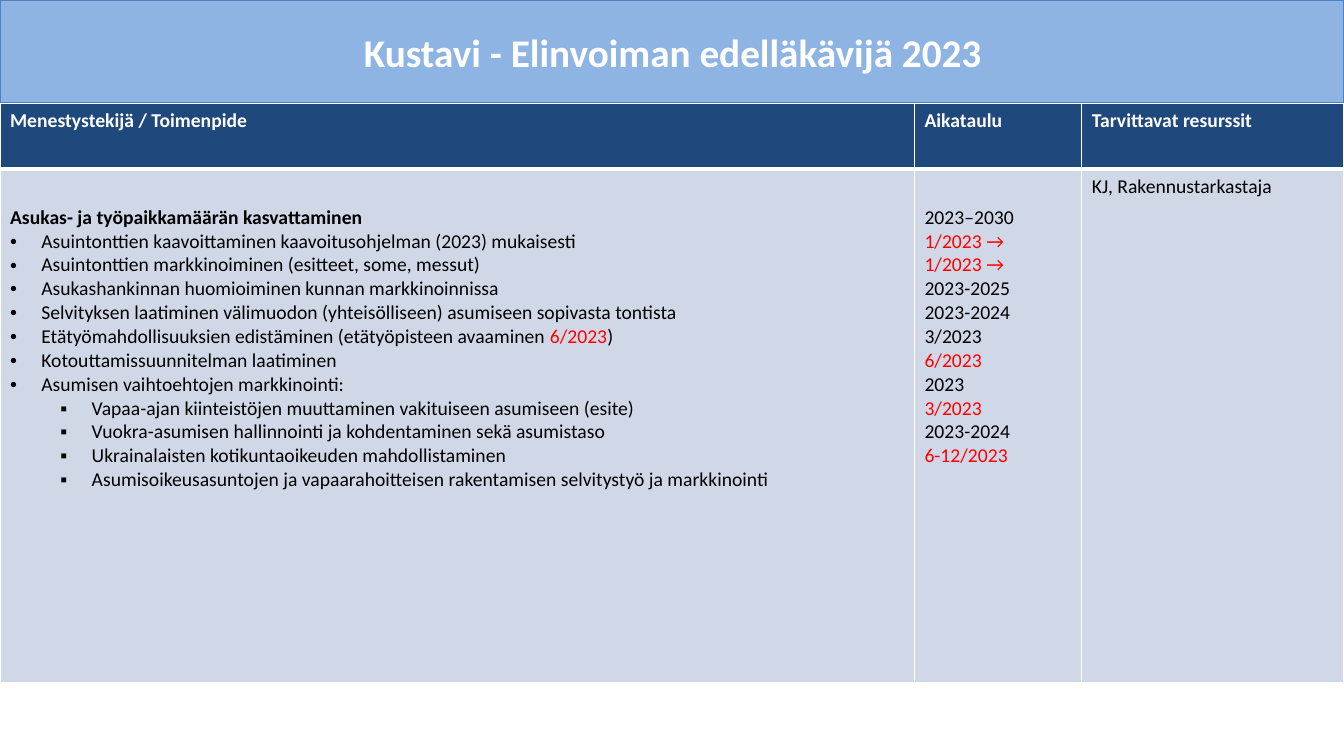
from lxml.etree import SubElement
from pptx import Presentation
from pptx.dml.color import RGBColor
from pptx.enum.shapes import MSO_SHAPE as SHAPE
from pptx.enum.text import MSO_ANCHOR as ANCHOR, PP_ALIGN as ALIGN
from pptx.oxml.ns import qn
from pptx.util import Inches, Pt

WHITE = RGBColor(0xFF, 0xFF, 0xFF)
BLACK = RGBColor(0x00, 0x00, 0x00)
RED = RGBColor(0xFF, 0x00, 0x00)
SKY = RGBColor(0x8E, 0xB4, 0xE3)
BLUE = RGBColor(0x4F, 0x81, 0xBD)
NAVY = RGBColor(0x1F, 0x49, 0x7D)
PALE = RGBColor(0xD0, 0xD8, 0xE8)

WIDTH, BANNER_H = 13.33, 1.03
COLS, ROWS = [9.07, 1.66, 2.6], [0.65, 5.09]
BULLETS = {1: ("•", 0.31), 2: ("▪", 0.81)}  # level: (mark, left indent)
HANG = 0.31

# Table text as (level, text); parts between bars are red
HEADERS = ["Menestystekijä / Toimenpide", "Aikataulu", "Tarvittavat resurssit"]
ACTIONS = [
    (0, "Asukas- ja työpaikkamäärän kasvattaminen"),
    (1, "Asuintonttien kaavoittaminen kaavoitusohjelman (2023) mukaisesti"),
    (1, "Asuintonttien markkinoiminen (esitteet, some, messut)"),
    (1, "Asukashankinnan huomioiminen kunnan markkinoinnissa"),
    (1, "Selvityksen laatiminen välimuodon (yhteisölliseen) asumiseen sopivasta tontista"),
    (1, "Etätyömahdollisuuksien edistäminen (etätyöpisteen avaaminen |6/2023|)"),
    (1, "Kotouttamissuunnitelman laatiminen"),
    (1, "Asumisen vaihtoehtojen markkinointi:"),
    (2, "Vapaa-ajan kiinteistöjen muuttaminen vakituiseen asumiseen (esite)"),
    (2, "Vuokra-asumisen hallinnointi ja kohdentaminen sekä asumistaso"),
    (2, "Ukrainalaisten kotikuntaoikeuden mahdollistaminen"),
    (2, "Asumisoikeusasuntojen ja vapaarahoitteisen rakentamisen selvitystyö ja markkinointi"),
]
SCHEDULE = ["2023–2030", "|1/2023 →|", "|1/2023 →|", "2023-2025", "2023-2024", "3/2023",
            "|6/2023|", "2023", "|3/2023|", "2023-2024", "|6-12/2023|"]
BODY = [ACTIONS, [(0, t) for t in SCHEDULE], [(0, "KJ, Rakennustarkastaja")]]
TOP_MARGINS = [0.36, 0.36, 0.05]


def add_run(p, text, size, color, bold):
    r = p.add_run()
    r.text = text
    for name, value in {"name": "Calibri", "size": Pt(size), "bold": bold}.items():
        setattr(r.font, name, value)
    r.font.color.rgb = color


def style_cell(cell, fill, bottom):
    tcPr = cell._tc.get_or_add_tcPr()
    for side, width in {"L": 1, "R": 1, "T": 1, "B": bottom}.items():
        ln = SubElement(tcPr, qn(f"a:ln{side}"), w=str(Pt(width)))
        SubElement(SubElement(ln, qn("a:solidFill")), qn("a:srgbClr"), val=str(WHITE))
    cell.fill.solid()
    cell.fill.fore_color.rgb = fill


prs = Presentation()
prs.slide_width, prs.slide_height = Inches(WIDTH), Inches(7.5)
s = prs.slides.add_slide(prs.slide_layouts[5])

# Banner, placed behind the title
banner = s.shapes.add_shape(SHAPE.RECTANGLE, 0, 0, Inches(WIDTH), Inches(BANNER_H))
banner.shadow.inherit = False
banner.fill.solid()
banner.fill.fore_color.rgb = SKY
banner.line.color.rgb = BLUE
banner.line.width = Pt(2)
title = s.shapes.title
title._element.addprevious(banner._element)

# Title
title.left, title.top, title.width, title.height = map(Inches, (0.67, 0, 12, BANNER_H))
title.text_frame.vertical_anchor = ANCHOR.MIDDLE
p = title.text_frame.paragraphs[0]
p.alignment = ALIGN.CENTER
add_run(p, "Kustavi - Elinvoiman edelläkävijä 2023", 28, WHITE, True)

# Table grid
table = s.shapes.add_table(len(ROWS), len(COLS), 0, Inches(BANNER_H),
                           Inches(WIDTH), Inches(sum(ROWS))).table
for col, width in zip(table.columns, COLS):
    col.width = Inches(width)
for row, height in zip(table.rows, ROWS):
    row.height = Inches(height)

# Header row
for i, text in enumerate(HEADERS):
    cell = table.cell(0, i)
    style_cell(cell, NAVY, 3)
    add_run(cell.text_frame.paragraphs[0], text, 14, WHITE, True)

# Body row
for i, (lines, margin) in enumerate(zip(BODY, TOP_MARGINS)):
    cell = table.cell(1, i)
    style_cell(cell, PALE, 1)
    cell.margin_top = Inches(margin)
    tf = cell.text_frame
    for n, (level, text) in enumerate(lines):
        p = tf.add_paragraph() if n else tf.paragraphs[0]
        if level:
            mark, indent = BULLETS[level]
            p.level = level - 1
            pPr = p._p.get_or_add_pPr()
            pPr.set("marL", str(Inches(indent)))
            pPr.set("indent", str(-Inches(HANG)))
            SubElement(pPr, qn("a:buFont"), typeface="Arial")
            SubElement(pPr, qn("a:buChar"), char=mark)
        for k, part in enumerate(text.split("|")):
            if part:
                add_run(p, part, 14, RED if k % 2 else BLACK, i == 0 and level == 0)

prs.save("out.pptx")
